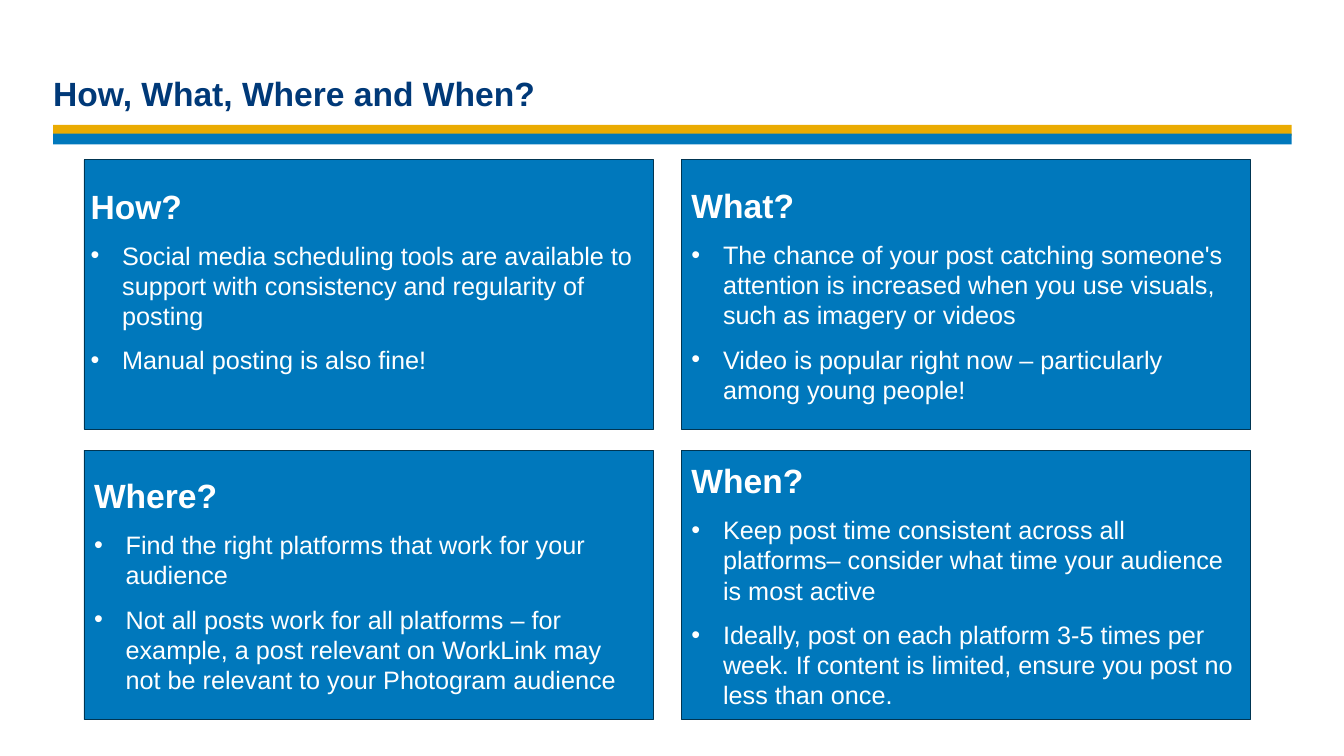
from pptx import Presentation
from pptx.dml.color import RGBColor
from pptx.enum.shapes import MSO_SHAPE
from pptx.enum.text import MSO_ANCHOR, PP_ALIGN
from pptx.util import Inches, Pt
from lxml.etree import SubElement
from pptx.oxml.ns import qn

COLORS = {"navy": "003978", "blue": "0078BC", "gold": "EAAB02",
          "edge": "003552", "white": "FFFFFF"}

# Heading, bullets, (left, top, right, bottom) insets
EVEN = (0.15, 0.07, 0.15, 0.07)
CARDS = [
    ("How?", ["Social media scheduling tools are available to support with "
              "consistency and regularity of posting",
              "Manual posting is also fine!"], (0.1, 0.05, 0.1, 0.48)),
    ("What?", ["The chance of your post catching someone's attention is "
               "increased when you use visuals, such as imagery or videos",
               "Video is popular right now – particularly among young people!"], EVEN),
    ("Where?", ["Find the right platforms that work for your audience",
                "Not all posts work for all platforms – for example, a post "
                "relevant on WorkLink may not be relevant to your Photogram "
                "audience"], EVEN),
    ("When?", ["Keep post time consistent across all platforms– consider what "
               "time your audience is most active",
               "Ideally, post on each platform 3-5 times per week. If content "
               "is limited, ensure you post no less than once."], EVEN),
]


def color(name):
    return RGBColor.from_string(COLORS[name])


def style(para, size, name, bold):
    for run in para.runs:
        font = run.font
        font.name, font.size, font.bold = "Arial", Pt(size), bold
        font.color.rgb = color(name)


def inset(frame, sides):
    (frame.margin_left, frame.margin_top,
     frame.margin_right, frame.margin_bottom) = map(Inches, sides)


def add_box(slide, box, fill, line=None):
    shape = slide.shapes.add_shape(MSO_SHAPE.RECTANGLE, *map(Inches, box))
    shape.shadow.inherit = False
    shape.fill.solid()
    shape.fill.fore_color.rgb = color(fill)
    if line:
        shape.line.color.rgb = color(line)
        shape.line.width = Pt(1)
    else:
        shape.line.fill.background()
    return shape


def add_bullet(para):
    props = para._p.get_or_add_pPr()
    props.set("marL", str(Inches(0.47)))
    props.set("indent", str(-Inches(0.47)))
    SubElement(props, qn("a:buFont"), typeface="Arial")
    SubElement(props, qn("a:buChar"), char="•")


def add_card(slide, box, head, items, sides):
    frame = add_box(slide, box, "blue", "edge").text_frame
    frame.word_wrap = True
    frame.vertical_anchor = MSO_ANCHOR.MIDDLE
    inset(frame, sides)
    frame.text = "\n".join([head, *items])
    first, *rest = frame.paragraphs
    first.alignment = PP_ALIGN.LEFT
    style(first, 36, "white", True)
    for para in rest:
        add_bullet(para)
        para.alignment = PP_ALIGN.LEFT
        para.space_before = Pt(15)
        style(para, 27, "white", False)


def set_title(slide, text):
    title = slide.shapes.title
    title.left, title.top = Inches(0.79), Inches(0.72)
    title.width, title.height = Inches(17.25), Inches(0.97)
    frame = title.text_frame
    frame.text = text
    frame.word_wrap = True
    frame.vertical_anchor = MSO_ANCHOR.BOTTOM
    inset(frame, (0, 0, 0, 0))
    para = frame.paragraphs[0]
    para.alignment = PP_ALIGN.LEFT
    para.line_spacing = 0.9
    style(para, 36, "navy", True)


def main():
    deck = Presentation()
    deck.slide_width, deck.slide_height = Inches(20), Inches(11.25)
    slide = deck.slides.add_slide(deck.slide_layouts[5])
    set_title(slide, "How, What, Where and When?")

    # Double rule under the title
    for top, fill in ((1.86, "gold"), (1.99, "blue")):
        add_box(slide, (0.79, top, 18.43, 0.16), fill)

    # Two by two grid of cards
    for i, card in enumerate(CARDS):
        row, col = divmod(i, 2)
        box = (1.25 + col * 8.89, 2.38 + row * 4.32, 8.47, 4.01)
        add_card(slide, box, *card)

    deck.save("out.pptx")


if __name__ == "__main__":
    main()
